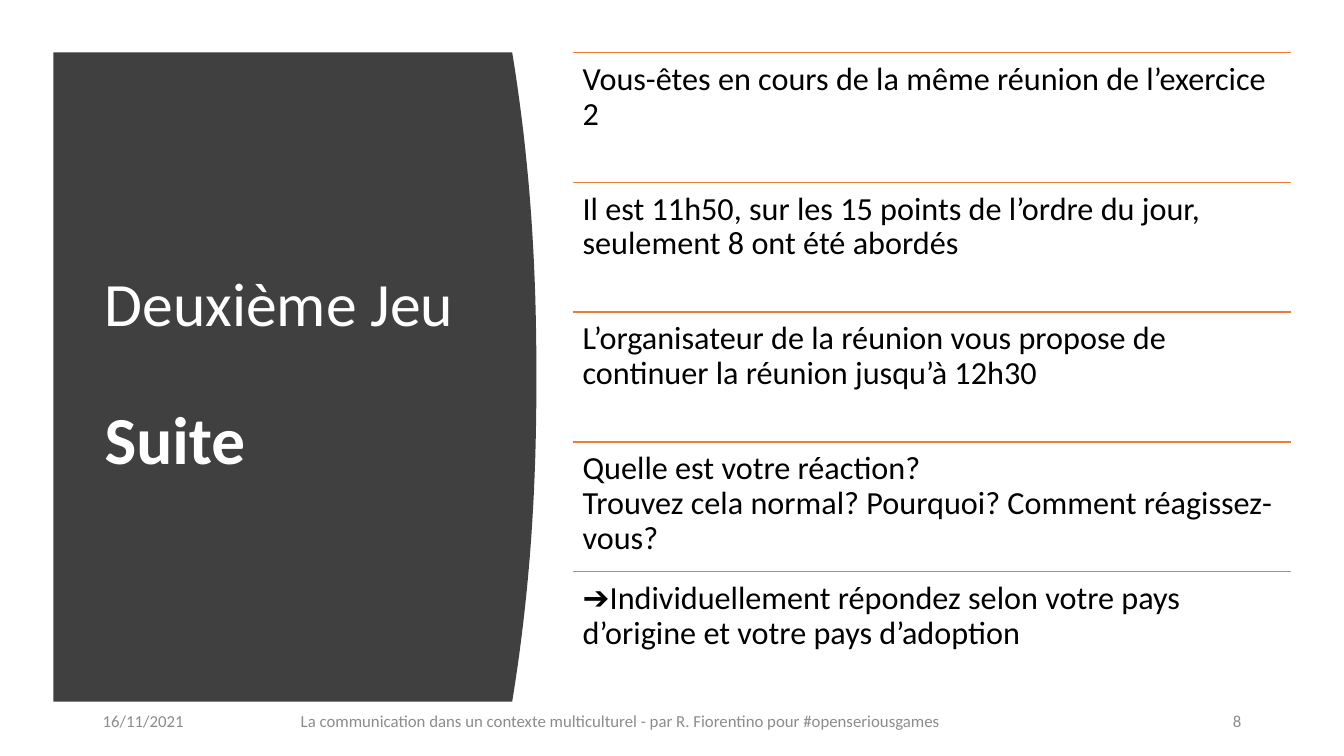
import pptx
import pptx.dml.color
import pptx.enum.shapes
import pptx.enum.text
import pptx.oxml.ns
import pptx.util
from lxml import etree
from pptx.util import Inches

DARK = pptx.dml.color.RGBColor(0x40, 0x40, 0x40)
ORANGE = pptx.dml.color.RGBColor(0xED, 0x7D, 0x31)
GREY = pptx.dml.color.RGBColor(0x8C, 0x8C, 0x8C)
BLACK = pptx.dml.color.RGBColor(0, 0, 0)
WHITE = pptx.dml.color.RGBColor(0xFF, 0xFF, 0xFF)
ALIGN = pptx.enum.text.PP_ALIGN
ANCHOR = pptx.enum.text.MSO_ANCHOR

prs = pptx.Presentation()
prs.slide_width, prs.slide_height = Inches(13.33), Inches(7.5)
s = prs.slides.add_slide(prs.slide_layouts[6])


def add_text(text, left, top, width, height, size=12, color=GREY, align=ALIGN.LEFT,
             anchor=ANCHOR.MIDDLE, inset=0.05, line_spacing=1.0):
    """Add a one-paragraph text box; newlines become line breaks of the text's size."""
    box = s.shapes.add_textbox(Inches(left), Inches(top), Inches(width), Inches(height))
    tf = box.text_frame
    tf.word_wrap = True
    tf.vertical_anchor = anchor
    tf.margin_top = tf.margin_bottom = Inches(inset)
    p = tf.paragraphs[0]
    p.text = text
    p.alignment = align
    p.line_spacing = line_spacing
    for r in p.runs:
        r.font.name = "Calibri"
        r.font.size = pptx.util.Pt(size)
        r.font.color.rgb = color
    for br in p._p.findall(pptx.oxml.ns.qn("a:br")):
        etree.SubElement(br, pptx.oxml.ns.qn("a:rPr"), sz=str(size * 100))
    return p


# Dark panel with a bulging right edge
TOP, HEIGHT = 0.52, 6.44
PANEL_LEFT, PANEL_RIGHT, BULGE = 0.53, 5.08, 0.24
STEPS = 40
edge = []
for i in range(STEPS + 1):
    offset = abs(2 * i / STEPS - 1)
    x = PANEL_RIGHT + BULGE * (1 - offset ** 2.2)
    edge.append((Inches(x), Inches(TOP + HEIGHT * i / STEPS)))
builder = s.shapes.build_freeform(Inches(PANEL_LEFT), Inches(TOP))
builder.add_line_segments(edge + [(Inches(PANEL_LEFT), Inches(TOP + HEIGHT))], close=True)
panel = builder.convert_to_shape()
panel.shadow.inherit = False
panel.fill.solid()
panel.fill.fore_color.rgb = DARK
panel.line.fill.background()

title = add_text("Deuxième Jeu\n\nSuite", 0.94, 1.11, 3.74, 5.24,
                 size=44, color=WHITE, line_spacing=0.9)
title.runs[-1].font.size = pptx.util.Pt(48)
title.runs[-1].font.bold = True

# Ruled list of steps
STEP_LEFT, STEP_WIDTH = 5.68, 7.12
steps = [
    "Vous-êtes en cours de la même réunion de l’exercice 2",
    "Il est 11h50, sur les 15 points de l’ordre du jour, seulement 8 ont été abordés",
    "L’organisateur de la réunion vous propose de continuer la réunion jusqu’à 12h30",
    "Quelle est votre réaction? \nTrouvez cela normal? Pourquoi? Comment réagissez-vous?",
    "➔Individuellement répondez selon votre pays d’origine et votre pays d’adoption",
]
row_height = HEIGHT / len(steps)
for i, step in enumerate(steps):
    y = TOP + i * row_height
    rule = s.shapes.add_connector(pptx.enum.shapes.MSO_CONNECTOR.STRAIGHT, Inches(STEP_LEFT),
                                  Inches(y), Inches(STEP_LEFT + STEP_WIDTH), Inches(y))
    rule.line.color.rgb = ORANGE
    rule.line.width = pptx.util.Pt(1)
    etree.SubElement(rule._element.spPr, pptx.oxml.ns.qn("a:effectLst"))
    add_text(step, STEP_LEFT, y, STEP_WIDTH, row_height, size=23, color=BLACK,
             anchor=ANCHOR.TOP, inset=0.1, line_spacing=0.9)

# Footer
footers = [
    ("La communication dans un contexte multiculturel - par R. Fiorentino pour #openseriousgames",
     2.18, 7.95, ALIGN.CENTER),
    ("8", 10.27, 2.14, ALIGN.RIGHT),
    ("16/11/2021", 0.92, 1.04, ALIGN.LEFT),
]
for text, left, width, align in footers:
    add_text(text, left, 6.95, width, 0.4, align=align)

prs.save("out.pptx")
